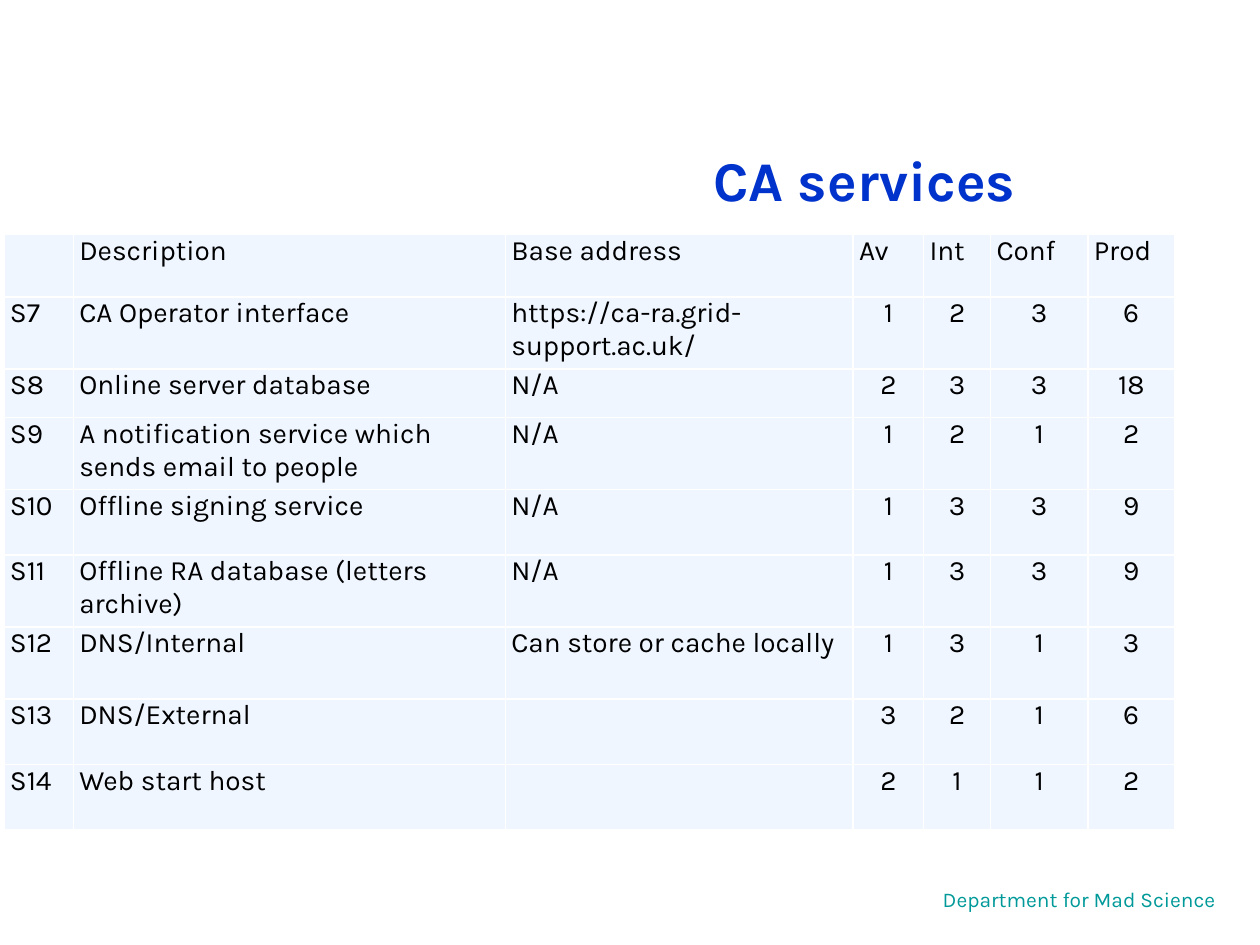
from dataclasses import dataclass

from lxml.etree import SubElement
from pptx import Presentation
from pptx.dml.color import RGBColor as RGB
from pptx.enum.text import MSO_ANCHOR as Anchor, PP_ALIGN as Align
from pptx.oxml.ns import qn
from pptx.util import Cm, Pt


@dataclass(frozen=True)
class Theme:
    font: str = "Karla"
    title_color: RGB = RGB(0x00, 0x33, 0xCC)
    footer_color: RGB = RGB(0x00, 0x99, 0x99)
    text_color: RGB = RGB(0x00, 0x00, 0x00)
    cell_fill: RGB = RGB(0xEF, 0xF6, 0xFF)
    border_color: RGB = RGB(0xFF, 0xFF, 0xFF)
    title_size: int = 32
    table_size: int = 16
    footer_size: int = 12


THEME = Theme()


def write_text(frame, text, size, color, align=Align.LEFT, bold=False, after=0):
    paragraph = frame.paragraphs[0]
    paragraph.alignment = align
    paragraph.space_before = Pt(0)
    paragraph.space_after = Pt(after)
    run = paragraph.add_run()
    run.text = text
    run.font.name = THEME.font
    run.font.size = Pt(size)
    run.font.bold = bold
    run.font.color.rgb = color


def add_borders(cell):
    properties = cell._tc.get_or_add_tcPr()
    for side in ("a:lnL", "a:lnR", "a:lnT", "a:lnB"):
        line = SubElement(properties, qn(side), w=str(Pt(1)))
        fill = SubElement(line, qn("a:solidFill"))
        SubElement(fill, qn("a:srgbClr"), val=str(THEME.border_color))


prs = Presentation()
prs.slide_width, prs.slide_height = Cm(25.4), Cm(19.05)
slide = prs.slides.add_slide(prs.slide_layouts[5])

# Footer
footer = slide.shapes.add_textbox(Cm(18.11), Cm(17.75), Cm(7.29), Cm(0.76))
footer.text_frame.word_wrap = True
write_text(footer.text_frame, "Department for Mad Science", THEME.footer_size,
           THEME.footer_color, align=Align.CENTER)

# Title
title = slide.shapes.title
title.left, title.top, title.width, title.height = Cm(9.91), Cm(2.13), Cm(15.04), Cm(2.97)
title.text_frame.vertical_anchor = Anchor.MIDDLE
write_text(title.text_frame, "CA services", THEME.title_size, THEME.title_color,
           align=Align.CENTER, bold=True)

# Services with their availability, integrity and confidentiality scores
HEADINGS = ("", "Description", "Base address", "Av", "Int", "Conf", "Prod")
SERVICES = [
    ("S7", "CA Operator interface", "https://ca-ra.grid-support.ac.uk/", 1, 2, 3),
    ("S8", "Online server database", "N/A", 2, 3, 3),
    ("S9", "A notification service which sends email to people", "N/A", 1, 2, 1),
    ("S10", "Offline signing service", "N/A", 1, 3, 3),
    ("S11", "Offline RA database (letters archive)", "N/A", 1, 3, 3),
    ("S12", "DNS/Internal", "Can store or cache locally", 1, 3, 1),
    ("S13", "DNS/External", "", 3, 2, 1),
    ("S14", "Web start host", "", 2, 1, 1),
]
COLUMN_WIDTHS = (1.4, 8.71, 7.01, 1.42, 1.35, 1.96, 1.75)
ROW_HEIGHTS = (1.26, 1.45, 0.98, 1.45, 1.32, 1.45, 1.45, 1.32, 1.32)

# Prod is the product of the three scores
rows = [HEADINGS] + [
    (*service, av * integrity * conf)
    for service in SERVICES
    for av, integrity, conf in [service[3:]]
]

services = slide.shapes.add_table(
    len(rows), len(HEADINGS), Cm(0.08), Cm(4.73),
    Cm(sum(COLUMN_WIDTHS)), Cm(sum(ROW_HEIGHTS))).table
services.first_row = False
services.horz_banding = False
for column, width in zip(services.columns, COLUMN_WIDTHS):
    column.width = Cm(width)
for row, height in zip(services.rows, ROW_HEIGHTS):
    row.height = Cm(height)

for row_index, row in enumerate(rows):
    for column_index, value in enumerate(row):
        cell = services.cell(row_index, column_index)
        add_borders(cell)
        cell.fill.solid()
        cell.fill.fore_color.rgb = THEME.cell_fill
        cell.margin_left = cell.margin_right = Cm(0.12)
        cell.margin_top = cell.margin_bottom = Cm(0)
        if value != "":
            write_text(cell.text_frame, str(value), THEME.table_size, THEME.text_color,
                       align=Align.CENTER if isinstance(value, int) else Align.LEFT,
                       after=12)

prs.save("out.pptx")
